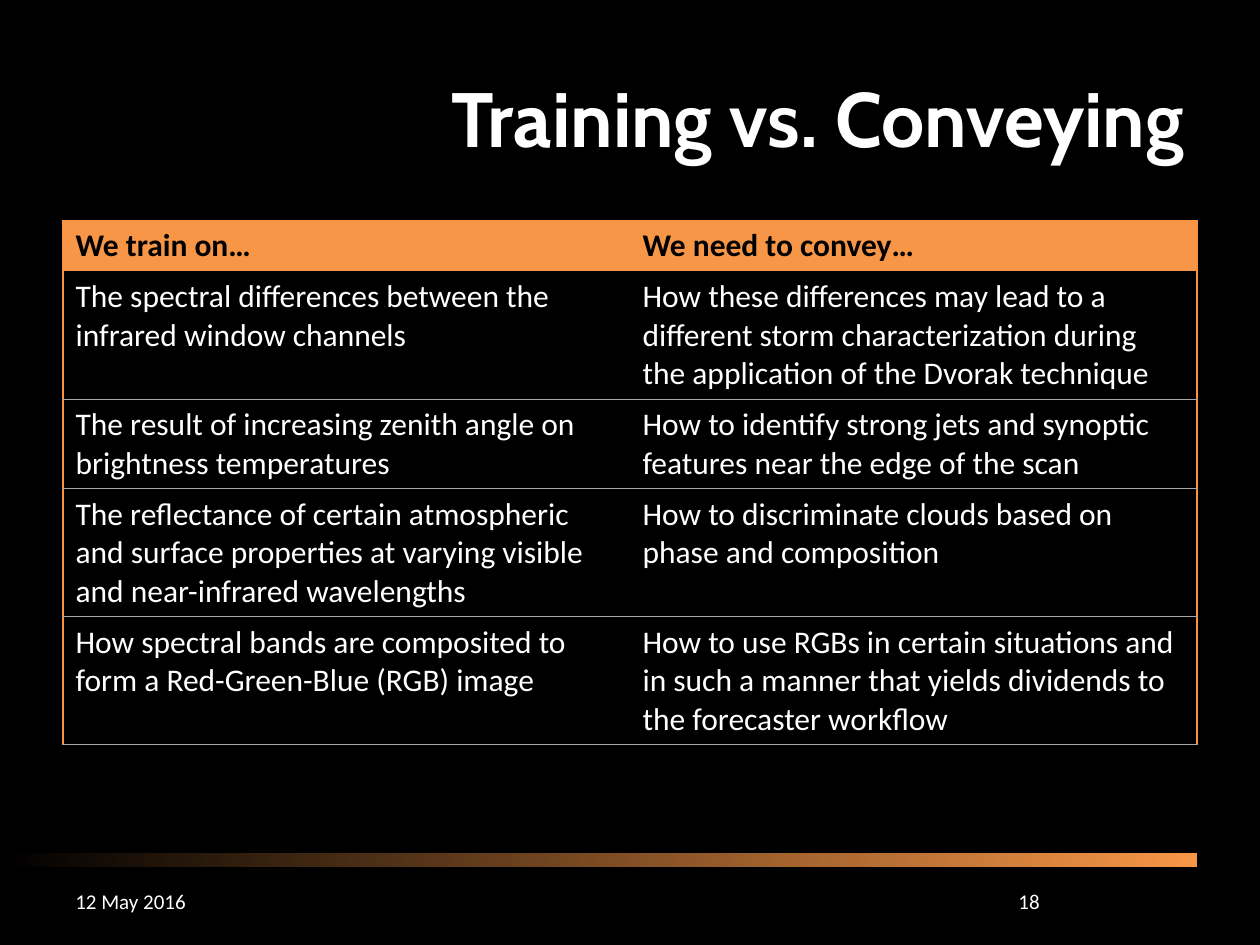
"""Build the Training vs. Conveying slide."""
import dataclasses
import typing

import pptx
import pptx.dml.color
import pptx.enum.shapes
import pptx.enum.text
import pptx.oxml
import pptx.oxml.ns
import pptx.util

WIDTH, HEIGHT = 10, 7.5
BLACK, WHITE, ORANGE, EDGE, RULE = "000000", "FFFFFF", "F79646", "F69240", "A6A6A6"
ALIGN = pptx.enum.text.PP_ALIGN


@dataclasses.dataclass(frozen=True)
class Area:
    """A rectangle in shares of the slide's size."""
    left: float
    top: float
    width: float
    height: float

    def lengths(self) -> list[int]:
        """Return left, top, width and height as slide lengths."""
        shares = (self.left, self.top, self.width, self.height)
        return [pptx.util.Inches(share * side)
                for share, side in zip(shares, (WIDTH, HEIGHT) * 2)]


@dataclasses.dataclass(frozen=True)
class Label:
    """A line of text and its look."""
    text: str
    area: Area
    size: int
    font: str = "Calibri"
    bold: bool = False
    align: typing.Any = ALIGN.LEFT


@dataclasses.dataclass(frozen=True)
class Row:
    """A pair of table texts and the lines the longer one takes."""
    train: str
    convey: str
    lines: int


LABELS = [
    Label("Training vs. Conveying", Area(0.05, 0.04, 0.9, 1 / 6), 44, "Cabin", True, ALIGN.RIGHT),
    Label("12 May 2016", Area(0.05, 0.927, 0.233, 0.053), 12),
    Label("18", Area(0.717, 0.927, 0.118, 0.053), 12, align=ALIGN.RIGHT),
]
ROWS = [
    Row("We train on…", "We need to convey…", 1),
    Row("The spectral differences between the infrared window channels",
        "How these differences may lead to a different storm characterization "
        "during the application of the Dvorak technique", 3),
    Row("The result of increasing zenith angle on brightness temperatures",
        "How to identify strong jets and synoptic features near the edge of the scan", 2),
    Row("The reflectance of certain atmospheric and surface properties at varying "
        "visible and near-infrared wavelengths",
        "How to discriminate clouds based on phase and composition", 3),
    Row("How spectral bands are composited to form a Red-Green-Blue (RGB) image",
        "How to use RGBs in certain situations and in such a manner that yields "
        "dividends to the forecaster workflow", 3),
]


def color(value: str) -> pptx.dml.color.RGBColor:
    """Turn a hex string into a colour."""
    return pptx.dml.color.RGBColor.from_string(value)


def style(paragraph, font: str, size: int, value: str, bold: bool) -> None:
    """Set the font of a paragraph."""
    paragraph.font.name = font
    paragraph.font.size = pptx.util.Pt(size)
    paragraph.font.bold = bold
    paragraph.font.color.rgb = color(value)


def add_label(slide, label: Label) -> None:
    """Add a text box centred vertically in its area."""
    frame = slide.shapes.add_textbox(*label.area.lengths()).text_frame
    frame.word_wrap = True
    frame.vertical_anchor = pptx.enum.text.MSO_ANCHOR.MIDDLE
    paragraph = frame.paragraphs[0]
    paragraph.text = label.text
    paragraph.alignment = label.align
    style(paragraph, label.font, label.size, WHITE, label.bold)


def add_bar(slide, area: Area) -> None:
    """Add the bar that fades from black to orange."""
    bar = slide.shapes.add_shape(pptx.enum.shapes.MSO_SHAPE.RECTANGLE, *area.lengths())
    bar.shadow.inherit = False
    bar.line.fill.background()
    bar.fill.gradient()
    bar.fill.gradient_angle = 0
    for stop, value in zip(bar.fill.gradient_stops, (BLACK, ORANGE)):
        stop.color.rgb = color(value)


def set_border(cell, side: str, value: str | None, points: float) -> None:
    """Draw one side of a cell, or clear it when no colour is given."""
    fill = f'<a:solidFill><a:srgbClr val="{value}"/></a:solidFill>' if value else "<a:noFill/>"
    cell._tc.get_or_add_tcPr().append(pptx.oxml.parse_xml(
        f'<a:ln{side} {pptx.oxml.ns.nsdecls("a")} w="{pptx.util.Pt(points)}">{fill}</a:ln{side}>'))


def fill_cell(cell, text: str, row: int, column: int) -> None:
    """Write and style one table cell."""
    header = row == 0
    paragraph = cell.text_frame.paragraphs[0]
    paragraph.text = text
    style(paragraph, "Calibri", 18, BLACK if header else WHITE, header)
    set_border(cell, "L", EDGE if column == 0 else None, 0.75)
    set_border(cell, "R", EDGE if column == 1 else None, 0.75)
    set_border(cell, "T", (EDGE, None)[row] if row < 2 else RULE, 0.75 if header else 0.5)
    set_border(cell, "B", None if header else RULE, 0.5)
    cell.fill.solid()
    cell.fill.fore_color.rgb = color(ORANGE if header else BLACK)


def add_comparison(slide, rows: list[Row], area: Area) -> None:
    """Add the two-column table with row heights that follow the line counts."""
    table = slide.shapes.add_table(len(rows), 2, *area.lengths()).table
    table.horz_banding = False
    for index, row in enumerate(rows):
        table.rows[index].height = pptx.util.Inches(0.1 + 0.305 * row.lines)
        for column, text in enumerate((row.train, row.convey)):
            fill_cell(table.cell(index, column), text, index, column)


def main() -> None:
    """Build and save the presentation."""
    presentation = pptx.Presentation()
    presentation.slide_width = pptx.util.Inches(WIDTH)
    presentation.slide_height = pptx.util.Inches(HEIGHT)
    slide = presentation.slides.add_slide(presentation.slide_layouts[6])
    slide.background.fill.solid()
    slide.background.fill.fore_color.rgb = color(BLACK)
    add_bar(slide, Area(0, 0.903, 0.95, 0.015))
    add_comparison(slide, ROWS, Area(0.05, 0.233, 0.9, 0.55))
    for label in LABELS:
        add_label(slide, label)
    presentation.save("out.pptx")


if __name__ == "__main__":
    main()
